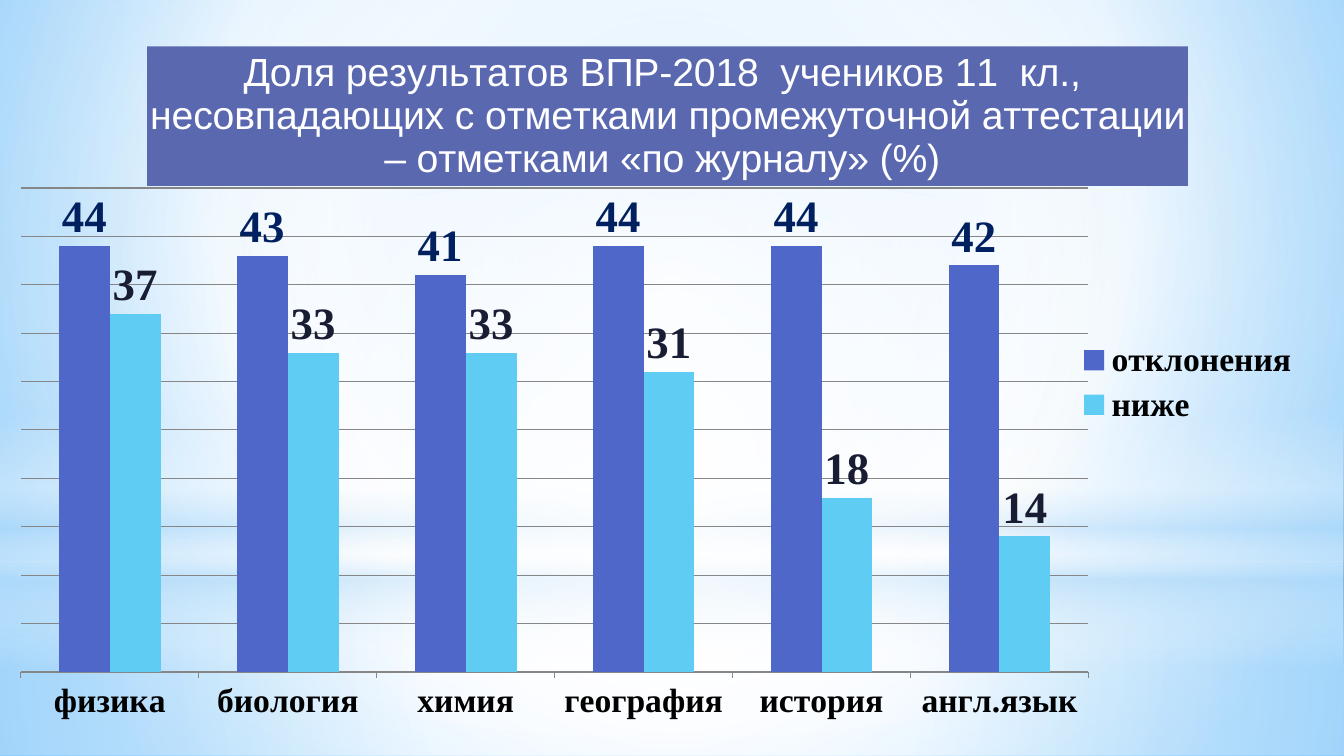
from lxml import etree
from pptx import Presentation
from pptx.chart.data import CategoryChartData
from pptx.dml.color import RGBColor
from pptx.enum.chart import XL_CHART_TYPE, XL_LABEL_POSITION, XL_LEGEND_POSITION, XL_TICK_LABEL_POSITION, XL_TICK_MARK
from pptx.enum.shapes import MSO_SHAPE
from pptx.oxml import parse_xml
from pptx.oxml.ns import nsdecls, qn
from pptx.util import Pt

COLUMNS = XL_CHART_TYPE.COLUMN_CLUSTERED
OUTSIDE = XL_LABEL_POSITION.OUTSIDE_END
RIGHT = XL_LEGEND_POSITION.RIGHT
LOW = XL_TICK_LABEL_POSITION.LOW
TICK_OUT = XL_TICK_MARK.OUTSIDE
RECT, OVAL = MSO_SHAPE.RECTANGLE, MSO_SHAPE.OVAL

TITLE = [
    "Доля результатов ВПР-2018  учеников 11  кл., ",
    "несовпадающих с отметками промежуточной аттестации – отметками «по журналу» (%) ",
]
SUBJECTS = ["физика", "биология", "химия", "география", "история", "англ.язык"]
SERIES = [
    ("отклонения ", [44, 43, 41, 44, 44, 42], "indigo", "navy"),
    ("ниже", [37, 33, 33, 31, 18, 14], "cyan", "ink"),
]
COLORS = {
    "white": "FFFFFF", "black": "000000", "grid": "868686", "banner": "5A68B0",
    "indigo": "4E67C8", "cyan": "5ECCF3", "navy": "002060", "ink": "191D34",
    "sky": "9ED5FF", "blue": "5BB9FF", "haze": "B4DCFA",
}
SERIF = "Times New Roman"
CENTER = (50, 50, 50, 50)
BACKDROP = [(0, "sky", 100), (60, "white", 100), (100, "blue", 100)]
BACKDROP_FOCUS = (20, 10, 20, 60)
GLOWS = [
    (RECT, (0, 562, 1344, 194), [(0, "white", 91), (37, "white", 76), (100, "haze", 79)], CENTER),
    (RECT, (0, 0, 1344, 562), [(0, "white", 89), (48, "white", 62), (100, "haze", 79)], CENTER),
    (RECT, (0, 415, 1344, 252), [(0, "white", 0), (29, "white", 30), (45, "haze", 40),
                                 (55, "white", 26), (65, "haze", 60), (100, "white", 0)], None),
    (OVAL, (0, 176, 1344, 562), [(0, "white", 100), (56, "white", 0)], CENTER),
]
SLIDE = (1344, 756)
CHART = (17, 25, 1302, 715)
TITLE_AT = {"x": 0.1, "y": 0.03}
PLOT_AT = {"x": 0.003, "y": 0.228, "w": 0.82, "h": 0.677}


def px(*lengths):
    return [round(n * 914400 / 100.8) for n in lengths]


def rgb(name):
    return RGBColor.from_string(COLORS[name])


def gradient(stops, focus):
    gs = "".join(
        f'<a:gs pos="{pos * 1000}"><a:srgbClr val="{COLORS[color]}">'
        f'<a:alpha val="{alpha * 1000}"/></a:srgbClr></a:gs>'
        for pos, color, alpha in stops)
    if focus:
        sides = " ".join(f'{side}="{n * 1000}"' for side, n in zip("ltrb", focus))
        kind = f'<a:path path="circle"><a:fillToRect {sides}/></a:path>'
    else:
        kind = '<a:lin ang="5400000" scaled="0"/>'
    return parse_xml(f'<a:gradFill {nsdecls("a")} rotWithShape="1"><a:gsLst>{gs}</a:gsLst>{kind}</a:gradFill>')


def paint(holder, fill, stops, focus):
    fill.solid()
    solid = holder.find(qn("a:solidFill"))
    holder.replace(solid, gradient(stops, focus))


def set_layout(element, index, values, inner=False):
    for old in element.findall(qn("c:layout")):
        element.remove(old)
    layout = etree.Element(qn("c:layout"))
    manual = etree.SubElement(layout, qn("c:manualLayout"))
    if inner:
        etree.SubElement(manual, qn("c:layoutTarget"), val="inner")
    for key in "xy":
        etree.SubElement(manual, qn(f"c:{key}Mode"), val="edge")
    for key, value in values.items():
        etree.SubElement(manual, qn(f"c:{key}"), val=str(value))
    element.insert(index, layout)


def set_font(font, size, color, name=SERIF, bold=True):
    font.size, font.name, font.bold = Pt(size), name, bold
    font.color.rgb = rgb(color)


def add_backdrop(slide):
    fill = slide.background.fill
    fill.solid()
    paint(slide.element.find(".//" + qn("p:bgPr")), fill, BACKDROP, BACKDROP_FOCUS)
    for shape, box, stops, focus in GLOWS:
        sp = slide.shapes.add_shape(shape, *px(*box))
        sp.shadow.inherit = False
        sp.line.fill.background()
        paint(sp.element.spPr, sp.fill, stops, focus)


def add_results_chart(slide):
    data = CategoryChartData()
    data.categories = SUBJECTS
    for name, values, _, _ in SERIES:
        data.add_series(name, values)
    chart = slide.shapes.add_chart(COLUMNS, *px(*CHART), data).chart
    set_font(chart.font, 10, "black", "Arial", False)

    title = chart.chart_title
    tf = title.text_frame
    tf.text = "\n".join(TITLE)
    for p in tf.paragraphs:
        set_font(p.font, 28, "white", "Arial", False)
    title.format.fill.solid()
    title.format.fill.fore_color.rgb = rgb("banner")
    set_layout(title._element, 1, TITLE_AT)
    set_layout(chart._chartSpace.chart.plotArea, 0, PLOT_AT, inner=True)

    chart.has_legend = True
    chart.legend.position = RIGHT
    chart.legend.include_in_layout = False
    set_font(chart.legend.font, 24, "black")

    subjects, percent = chart.category_axis, chart.value_axis
    set_font(subjects.tick_labels.font, 24, "black")
    subjects.tick_label_position = LOW
    subjects.major_tick_mark = TICK_OUT
    percent.minimum_scale, percent.maximum_scale, percent.major_unit = 0, 50, 5
    percent.has_major_gridlines = True
    percent.visible = False
    for line in (subjects.format.line, percent.major_gridlines.format.line):
        line.color.rgb = rgb("grid")
        line.width = Pt(0.75)

    plot = chart.plots[0]
    plot.gap_width, plot.overlap, plot.vary_by_categories = 150, 0, False
    for series, (_, _, color, label_color) in zip(plot.series, SERIES):
        series.format.fill.solid()
        series.format.fill.fore_color.rgb = rgb(color)
        labels = series.data_labels
        labels.show_value = True
        labels.position = OUTSIDE
        set_font(labels.font, 32, label_color)


def main():
    prs = Presentation()
    prs.slide_width, prs.slide_height = px(*SLIDE)
    slide = prs.slides.add_slide(prs.slide_layouts[6])
    add_backdrop(slide)
    add_results_chart(slide)
    prs.save("out.pptx")


if __name__ == "__main__":
    main()
